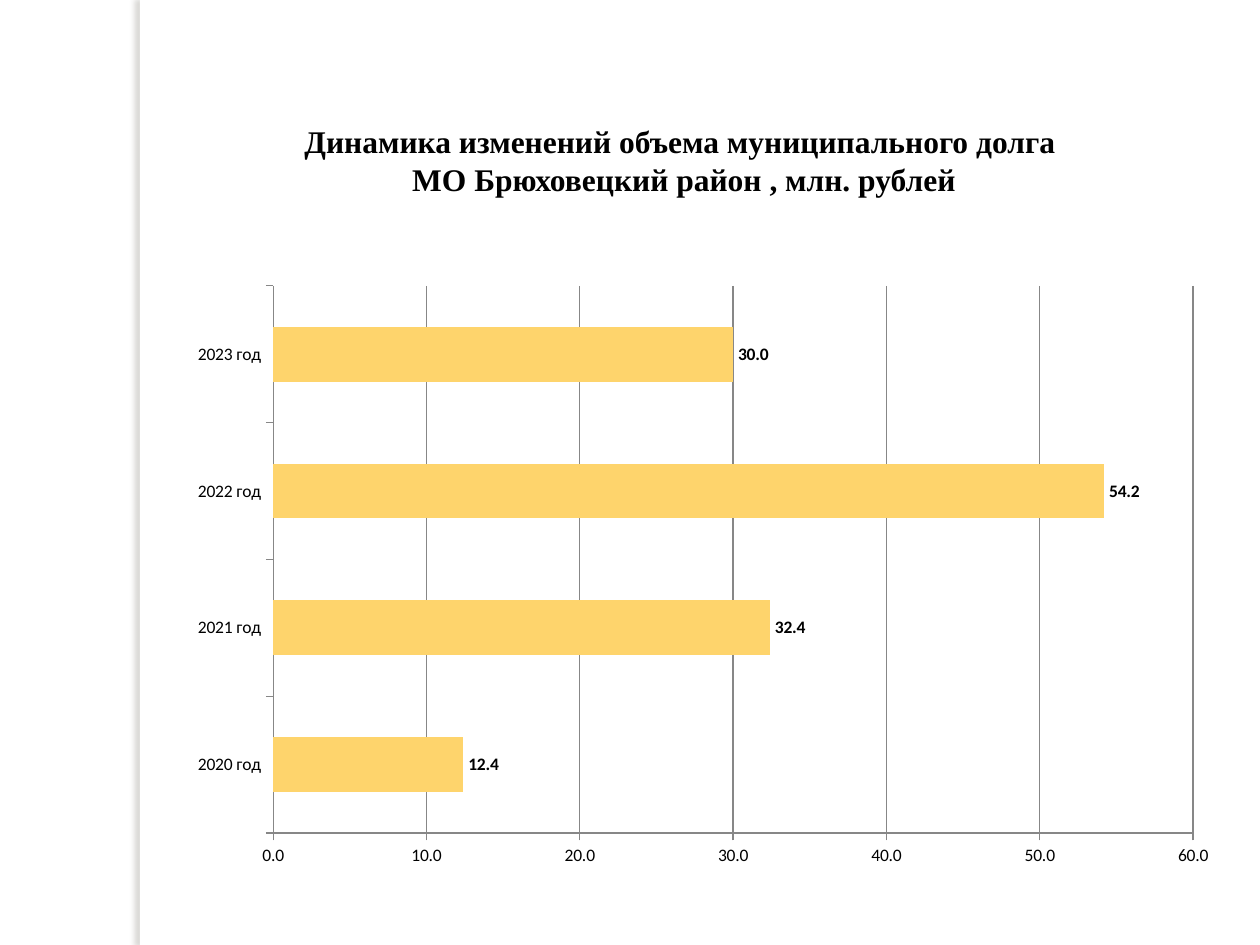
from lxml.etree import SubElement
from pptx import Presentation
from pptx.chart.data import CategoryChartData
from pptx.dml.color import RGBColor
from pptx.enum.chart import XL_CHART_TYPE, XL_LABEL_POSITION, XL_TICK_MARK
from pptx.enum.shapes import MSO_SHAPE
from pptx.enum.text import PP_ALIGN
from pptx.oxml import parse_xml
from pptx.oxml.ns import nsdecls, qn
from pptx.util import Emu, Pt

SCALE = 914400 / 126
HUES = {"text": "000000", "page": "FFFFFF", "shade": "736F63",
        "bar": "FED46C", "line": "878787"}
TITLE = ["Динамика изменений объема муниципального долга ",
         "МО Брюховецкий район , млн. рублей"]
DEBT = {"2020 год": 12.4, "2021 год": 32.4, "2022 год": 54.2, "2023 год": 30.0}
FORMAT = "#,##0.0"


def px(*sizes):
    return [Emu(round(size * SCALE)) for size in sizes]


def hue(name):
    return RGBColor.from_string(HUES[name])


def apply(item, values):
    for name, value in values.items():
        setattr(item, name, value)


class Deck:
    """Holds the style and the current slide."""

    def __init__(self, width, height):
        self.show = Presentation()
        size = px(width, height)
        apply(self.show, {"slide_width": size[0], "slide_height": size[1]})
        self.slide = self.show.slides.add_slide(self.show.slide_layouts[6])

    def font(self, font, **values):
        apply(font, values)
        font.color.rgb = hue("text")

    def strip(self, *box):
        """Add a white band that casts a soft shadow to the left."""
        band = self.slide.shapes.add_shape(MSO_SHAPE.RECTANGLE, *px(*box))
        band.fill.solid()
        band.fill.fore_color.rgb = hue("page")
        band.line.fill.background()
        band.shadow.inherit = False
        glow = band.element.spPr.find(qn("a:effectLst"))
        glow.append(parse_xml(
            f'<a:outerShdw {nsdecls("a")} blurRad="{Pt(3)}" dist="{Pt(3)}" '
            f'dir="10800000" algn="tl" rotWithShape="0">'
            f'<a:srgbClr val="{HUES["shade"]}"><a:alpha val="25000"/>'
            f'</a:srgbClr></a:outerShdw>'))

    def text(self, lines, *box):
        frame = self.slide.shapes.add_textbox(*px(*box)).text_frame
        frame.word_wrap = True
        for index, line in enumerate(lines):
            para = frame.add_paragraph() if index else frame.paragraphs[0]
            para.alignment = PP_ALIGN.CENTER
            run = para.add_run()
            run.text = line
            self.font(run.font, name="Times New Roman", size=Pt(18), bold=True)

    def bars(self, values, *box):
        data = CategoryChartData(number_format=FORMAT)
        data.categories = list(values)
        data.add_series("Series 1", list(values.values()))
        chart = self.slide.shapes.add_chart(
            XL_CHART_TYPE.BAR_CLUSTERED, *px(*box), data).chart
        apply(chart, {"has_legend": False, "has_title": False})
        self.font(chart.font, name="Calibri", size=Pt(10))
        plot = chart.plots[0]
        apply(plot, {"gap_width": 150, "vary_by_categories": False,
                     "has_data_labels": True})
        labels = plot.data_labels
        apply(labels, {"show_value": True, "number_format": FORMAT,
                       "number_format_is_linked": False,
                       "position": XL_LABEL_POSITION.OUTSIDE_END})
        self.font(labels.font, name="Calibri", size=Pt(10), bold=True)
        fill = plot.series[0].format.fill
        fill.solid()
        fill.fore_color.rgb = hue("bar")
        self.axes(chart)
        self.place(chart, x=0.102, y=0.093, w=0.859, h=0.823)

    def axes(self, chart):
        scale = chart.value_axis
        apply(scale, {"minimum_scale": 0, "maximum_scale": 60,
                      "major_unit": 10, "has_major_gridlines": True})
        apply(scale.tick_labels, {"number_format": FORMAT,
                                  "number_format_is_linked": False})
        for axis in (chart.category_axis, scale):
            apply(axis, {"major_tick_mark": XL_TICK_MARK.OUTSIDE,
                         "minor_tick_mark": XL_TICK_MARK.NONE})
        for part in (chart.category_axis, scale, scale.major_gridlines):
            part.format.line.color.rgb = hue("line")
            part.format.line.width = Pt(0.75)

    def place(self, chart, **shares):
        """Fix the inner plot area as shares of the chart's size."""
        area = chart.element.find(".//" + qn("c:plotArea"))
        for old in area.findall(qn("c:layout")):
            area.remove(old)
        layout = parse_xml(f'<c:layout {nsdecls("c")}/>')
        manual = SubElement(layout, qn("c:manualLayout"))
        rules = {"layoutTarget": "inner", "xMode": "edge", "yMode": "edge"}
        for name, value in {**rules, **shares}.items():
            SubElement(manual, qn("c:" + name)).set("val", str(value))
        area.insert(0, layout)


def main():
    deck = Deck(1260, 945)
    deck.strip(140, 0, 10, 945)
    deck.text(TITLE, 223, 116, 922, 89)
    deck.bars(DEBT, 164, 224, 1071, 665)
    deck.show.save("out.pptx")


if __name__ == "__main__":
    main()
